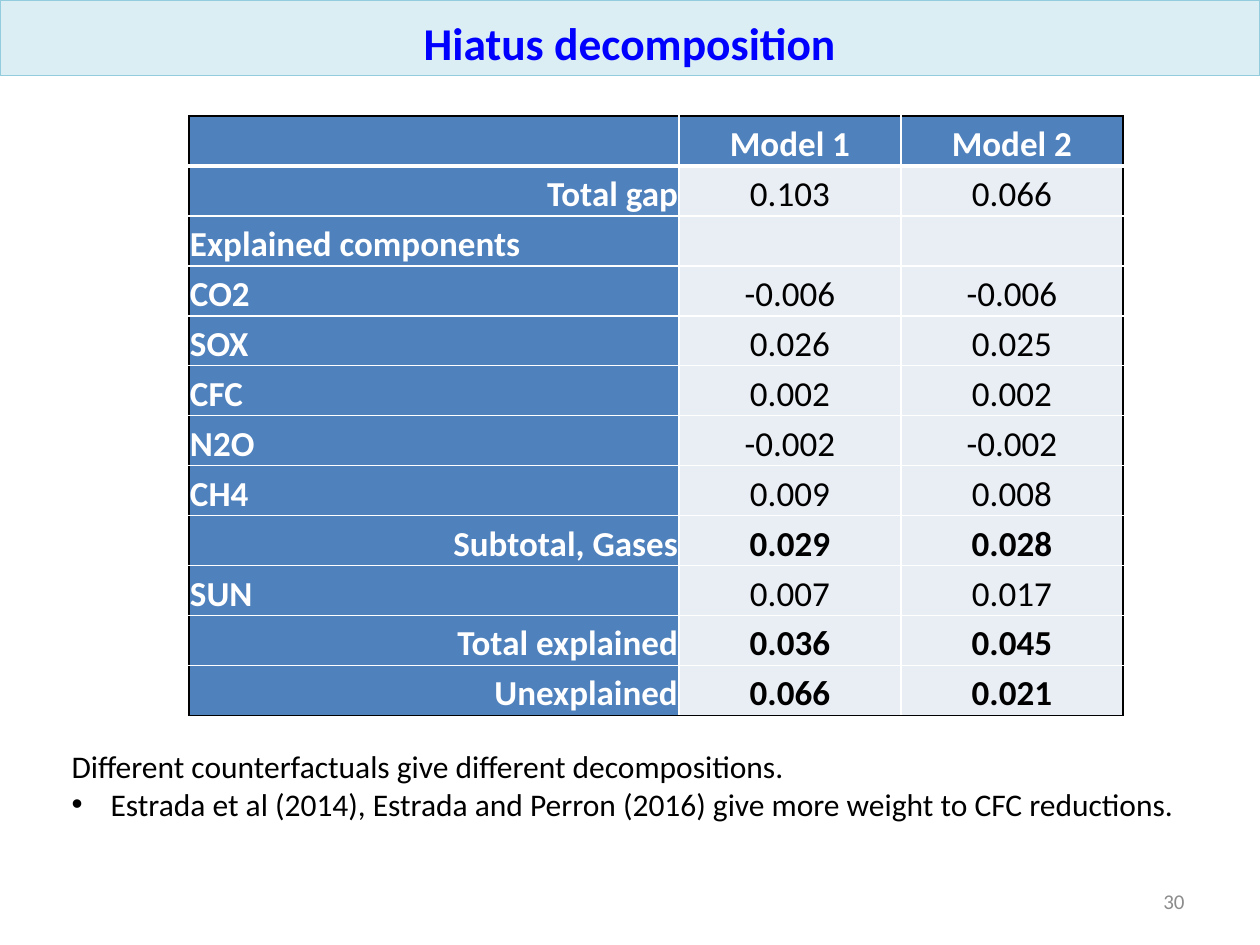
from dataclasses import dataclass
from typing import Any

from lxml.etree import SubElement
from pptx import Presentation
from pptx.dml.color import RGBColor
from pptx.enum.text import MSO_ANCHOR as Anchor, MSO_AUTO_SIZE as AutoSize, PP_ALIGN as Align
from pptx.oxml.ns import qn
from pptx.util import Pt

EMU_PER_PX = 914400 / 126


@dataclass(frozen=True)
class Theme:
    font: str = "Calibri"
    title: str = "0000FF"
    banner: str = "DBEEF4"
    banner_line: str = "93CDDD"
    head: str = "4F81BD"
    body: str = "E9EDF4"
    light: str = "FFFFFF"
    dark: str = "000000"
    muted: str = "8C8C8C"
    title_size: int = 26
    table_size: int = 20
    note_size: int = 18
    number_size: int = 12


@dataclass(frozen=True)
class Row:
    label: str
    model_1: str = ""
    model_2: str = ""
    is_total: bool = False
    bold_values: bool = False


THEME = Theme()
HEADER = Row("", "Model 1", "Model 2", bold_values=True)
ROWS = [
    HEADER,
    Row("Total gap", "0.103", "0.066", is_total=True),
    Row("Explained components"),
    Row("CO2", "-0.006", "-0.006"),
    Row("SOX", "0.026", "0.025"),
    Row("CFC", "0.002", "0.002"),
    Row("N2O", "-0.002", "-0.002"),
    Row("CH4", "0.009", "0.008"),
    Row("Subtotal, Gases", "0.029", "0.028", True, True),
    Row("SUN", "0.007", "0.017"),
    Row("Total explained", "0.036", "0.045", True, True),
    Row("Unexplained", "0.066", "0.021", True, True),
]
COLUMN_WIDTHS = [490, 222, 222]
ROW_HEIGHT = 50
NOTES = [
    "Different counterfactuals give different decompositions.",
    "Estrada et al (2014), Estrada and Perron (2016) give more weight to CFC reductions.",
]


def px(length: int) -> int:
    return round(length * EMU_PER_PX)


def apply(target: Any, values: dict[str, Any]) -> None:
    for name, value in values.items():
        setattr(target, name, value)


def place(shape: Any, left: int, top: int, width: int, height: int) -> None:
    apply(shape, {"left": px(left), "top": px(top), "width": px(width), "height": px(height)})


def write(paragraph: Any, text: str, size: int, color: str,
          bold: bool = False, align: Align = Align.LEFT) -> None:
    apply(paragraph, {"alignment": align, "space_before": Pt(0)})
    run = paragraph.add_run()
    run.text = text
    apply(run.font, {"name": THEME.font, "size": Pt(size), "bold": bold})
    run.font.color.rgb = RGBColor.from_string(color)


def fill(target: Any, color: str) -> None:
    target.fill.solid()
    target.fill.fore_color.rgb = RGBColor.from_string(color)


def add_borders(cell: Any, row: int, column: int) -> None:
    """Black around the table, white inside, thick below the header."""
    last_row, last_column = len(ROWS) - 1, len(COLUMN_WIDTHS) - 1
    sides = {
        "a:lnL": (column == 0, 1),
        "a:lnR": (column == last_column, 1),
        "a:lnT": (row == 0, 3 if row == 1 else 1),
        "a:lnB": (row == last_row, 3 if row == 0 else 1),
    }
    properties = cell._tc.get_or_add_tcPr()
    for tag, (is_outer, width) in sides.items():
        line = SubElement(properties, qn(tag), w=str(Pt(width)))
        color = THEME.dark if is_outer else THEME.light
        SubElement(SubElement(line, qn("a:solidFill")), qn("a:srgbClr"), val=color)


def add_title(slide: Any) -> None:
    title = slide.shapes.title
    place(title, 0, 0, 1260, 76)
    fill(title, THEME.banner)
    title.line.color.rgb = RGBColor.from_string(THEME.banner_line)
    title.line.width = Pt(0)
    apply(title.text_frame, {"vertical_anchor": Anchor.BOTTOM, "auto_size": AutoSize.NONE})
    write(title.text_frame.paragraphs[0], "Hiatus decomposition",
          THEME.title_size, THEME.title, True, Align.CENTER)


def add_results(slide: Any) -> None:
    frame = slide.shapes.add_table(
        len(ROWS), len(COLUMN_WIDTHS), px(189), px(116),
        px(sum(COLUMN_WIDTHS)), px(ROW_HEIGHT * len(ROWS)))
    table = frame.table
    apply(table, {"first_row": False, "horz_banding": False})
    for column, width in zip(table.columns, COLUMN_WIDTHS):
        column.width = px(width)
    for i, row in enumerate(ROWS):
        table.rows[i].height = px(ROW_HEIGHT)
        for j, text in enumerate((row.label, row.model_1, row.model_2)):
            cell = table.cell(i, j)
            is_label = j == 0
            is_head = is_label or row is HEADER
            apply(cell, {"margin_left": px(1), "margin_right": px(1), "margin_top": px(1),
                         "margin_bottom": 0, "vertical_anchor": Anchor.BOTTOM})
            add_borders(cell, i, j)
            fill(cell, THEME.head if is_head else THEME.body)
            if text:
                label_align = Align.RIGHT if row.is_total else Align.LEFT
                write(cell.text_frame.paragraphs[0], text, THEME.table_size,
                      THEME.light if is_head else THEME.dark,
                      is_label or row.bold_values,
                      label_align if is_label else Align.CENTER)


def add_notes(slide: Any) -> None:
    body = slide.placeholders[1]
    place(body, 59, 741, 1159, 89)
    frame = body.text_frame
    frame.auto_size = AutoSize.NONE
    for i, text in enumerate(NOTES):
        paragraph = frame.add_paragraph() if i else frame.paragraphs[0]
        write(paragraph, text, THEME.note_size, THEME.dark)
        # Only the second line is a bullet with a hanging indent
        indent = px(39) if i else 0
        properties = paragraph._p.get_or_add_pPr()
        properties.set("marL", str(indent))
        properties.set("indent", str(-indent))
        if i:
            SubElement(properties, qn("a:buFont"), typeface="Arial")
            SubElement(properties, qn("a:buChar"), char="•")
        else:
            SubElement(properties, qn("a:buNone"))


def add_page_number(slide: Any) -> None:
    box = slide.shapes.add_textbox(px(1124), px(876), px(73), px(50))
    apply(box.text_frame, {"word_wrap": True, "vertical_anchor": Anchor.MIDDLE})
    write(box.text_frame.paragraphs[0], "30", THEME.number_size, THEME.muted, align=Align.RIGHT)


def main() -> None:
    presentation = Presentation()
    apply(presentation, {"slide_width": px(1260), "slide_height": px(945)})
    slide = presentation.slides.add_slide(presentation.slide_layouts[1])
    add_title(slide)
    add_results(slide)
    add_notes(slide)
    add_page_number(slide)
    presentation.save("out.pptx")


if __name__ == "__main__":
    main()
